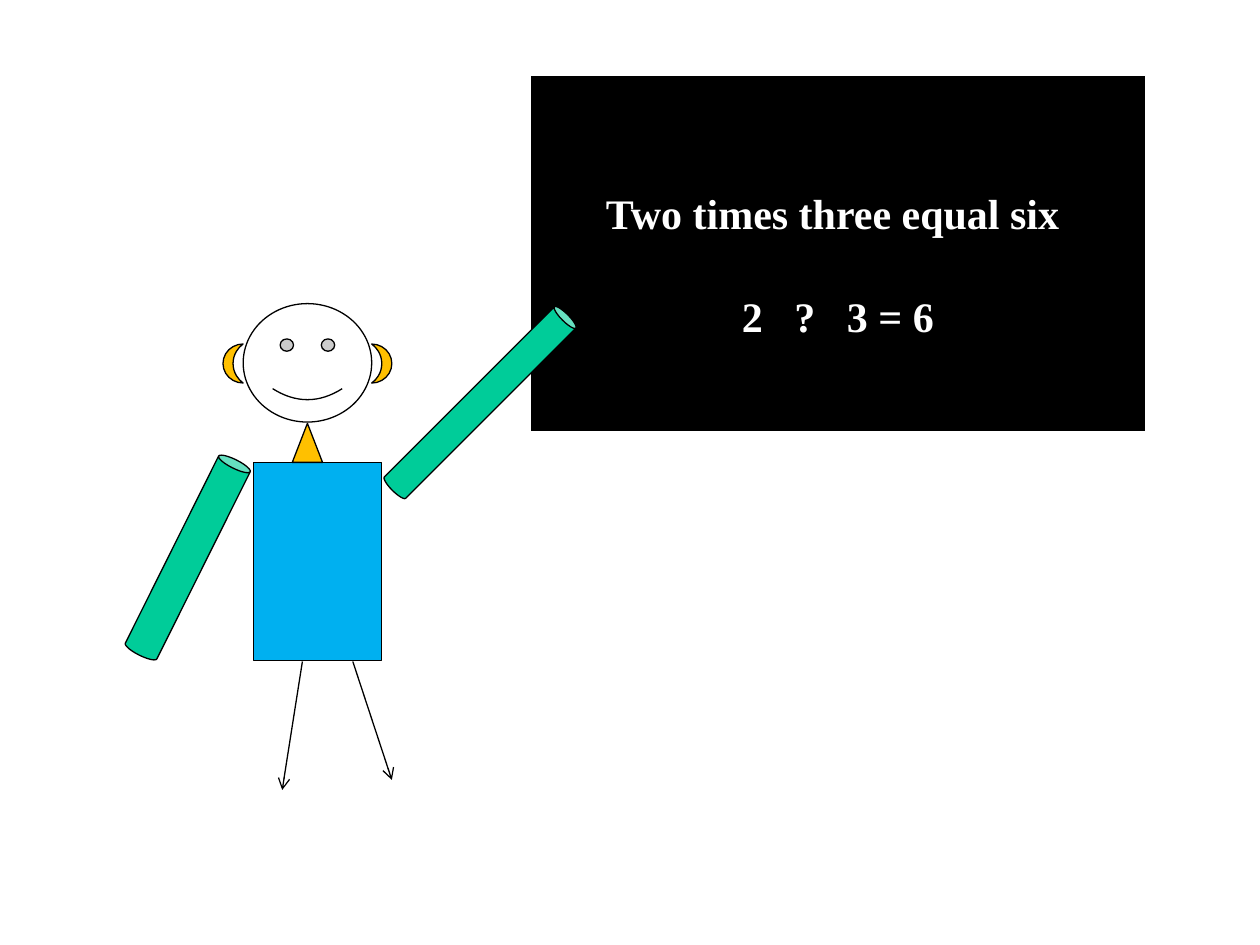
"""Build a slide with a stick-figure teacher pointing at a blackboard."""
from dataclasses import dataclass

from lxml.etree import SubElement
from pptx import Presentation
from pptx.dml.color import RGBColor
from pptx.enum.shapes import MSO_CONNECTOR, MSO_SHAPE
from pptx.enum.text import MSO_ANCHOR, PP_ALIGN
from pptx.oxml.ns import qn
from pptx.util import Inches, Pt

BLACK, WHITE = "000000", "FFFFFF"
BLUE, GREEN, GOLD = "00B0F0", "00CC99", "FFC000"
LINE_WIDTH = Pt(0.75)
WIDE_SPACING = "1200"


@dataclass
class Part:
    preset: MSO_SHAPE
    left: float
    top: float
    width: float
    height: float
    fill: str
    line: str = BLACK
    rotation: float = 0


@dataclass
class Leg:
    start: tuple[float, float]
    end: tuple[float, float]


BLACKBOARD = Part(MSO_SHAPE.RECTANGLE, 4.21, 0.6, 4.88, 2.83, BLACK, WHITE)
BODY_PARTS = [
    Part(MSO_SHAPE.SMILEY_FACE, 1.93, 2.41, 1.02, 0.94, WHITE),
    Part(MSO_SHAPE.RECTANGLE, 2.01, 3.67, 1.02, 1.57, BLUE),
    Part(MSO_SHAPE.CAN, 1.35, 3.56, 0.28, 1.73, GREEN, rotation=26.5),
    Part(MSO_SHAPE.CAN, 3.69, 2.21, 0.24, 1.97, GREEN, rotation=45),
]
LEGS = [Leg((2.4, 5.25), (2.24, 6.27)), Leg((2.8, 5.25), (3.11, 6.19))]
NECK_AND_EARS = [
    Part(MSO_SHAPE.ISOSCELES_TRIANGLE, 2.32, 3.36, 0.24, 0.31, GOLD),
    Part(MSO_SHAPE.MOON, 2.95, 2.73, 0.16, 0.31, GOLD, rotation=180),
    Part(MSO_SHAPE.MOON, 1.77, 2.73, 0.16, 0.31, GOLD),
]
BOARD_LINES = [
    ["Two times three equal six", " "],
    ["2", " ", "?", " ", "3 = 6"],
]


def color(value: str) -> RGBColor:
    """Turn a hex string into a colour."""
    return RGBColor.from_string(value)


def draw_part(slide, part: Part):
    """Draw one preset shape and return it."""
    box = map(Inches, (part.left, part.top, part.width, part.height))
    shape = slide.shapes.add_shape(part.preset, *box)
    shape.shadow.inherit = False
    shape.rotation = part.rotation
    shape.fill.solid()
    shape.fill.fore_color.rgb = color(part.fill)
    shape.line.color.rgb = color(part.line)
    shape.line.width = LINE_WIDTH
    return shape


def draw_leg(slide, leg: Leg) -> None:
    """Draw one leg as a line with an open arrowhead for a foot."""
    points = map(Inches, (*leg.start, *leg.end))
    connector = slide.shapes.add_connector(MSO_CONNECTOR.STRAIGHT, *points)
    connector.line.color.rgb = color(BLACK)
    connector.line.width = LINE_WIDTH
    SubElement(connector.line._get_or_add_ln(), qn("a:tailEnd"), type="arrow")
    SubElement(connector._element.spPr, qn("a:effectLst"))


def write_board(shape, lines: list[list[str]]) -> None:
    """Write the centred lines, widening each run that is a lone space."""
    text_frame = shape.text_frame
    text_frame.word_wrap = True
    text_frame.vertical_anchor = MSO_ANCHOR.TOP
    text_frame.margin_top = Inches(0.89)
    for index, pieces in enumerate(lines):
        paragraph = text_frame.add_paragraph() if index else text_frame.paragraphs[0]
        paragraph.alignment = PP_ALIGN.CENTER
        if index:
            paragraph.space_before = Pt(30)
        for piece in pieces:
            run = paragraph.add_run()
            run.text = piece
            run.font.name = "Times New Roman"
            run.font.size = Pt(24)
            run.font.bold = True
            run.font.color.rgb = color(WHITE)
            if piece == " ":
                run.font._element.set("spc", WIDE_SPACING)


def main() -> None:
    """Build and save the presentation."""
    presentation = Presentation()
    presentation.slide_width = Inches(10)
    presentation.slide_height = Inches(7.5)
    slide = presentation.slides.add_slide(presentation.slide_layouts[6])
    write_board(draw_part(slide, BLACKBOARD), BOARD_LINES)
    for part in BODY_PARTS:
        draw_part(slide, part)
    for leg in LEGS:
        draw_leg(slide, leg)
    for part in NECK_AND_EARS:
        draw_part(slide, part)
    presentation.save("out.pptx")


if __name__ == "__main__":
    main()
